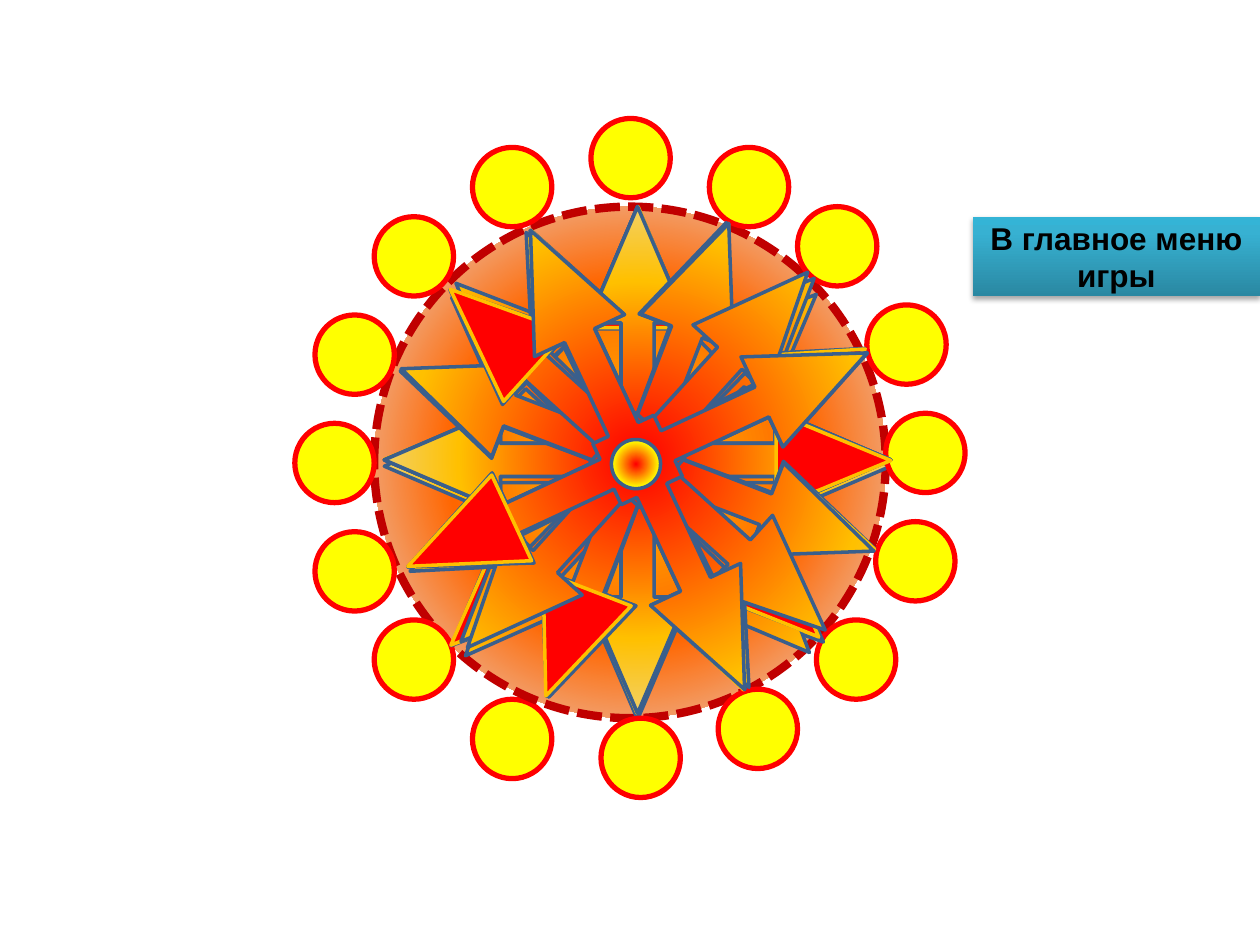
from dataclasses import dataclass

import pptx
import pptx.dml.color
import pptx.enum.dml
import pptx.enum.shapes
import pptx.enum.text
import pptx.oxml
import pptx.oxml.ns
import pptx.util
from pptx.util import Inches

SHAPE = pptx.enum.shapes.MSO_SHAPE
NS = pptx.oxml.ns.nsdecls("a")


@dataclass
class Gradient:
    stops: list[tuple[int, str]]
    angle: int | None = None


@dataclass
class Line:
    color: str
    width: float
    dash: object = None


@dataclass
class Style:
    fill: str | Gradient | None = None
    line: Line | None = None


@dataclass
class Spoke:
    left: float
    top: float
    rotation: float


DISC = Style(Gradient([(0, "FFC000"), (50, "FF6600"), (100, "E1E8F5")]))
RING = Style(line=Line("C00000", 4.75, pptx.enum.dml.MSO_LINE.SQUARE_DOT))
BULB = Style("FFFF00", Line("FF0000", 3))
ARROWS = Style(Gradient([(0, "FF0000"), (50, "FFC000"), (100, "E1E8F5")]), Line("3A5F8C", 2))
POINTER = Style("FF0000", Line("FFC000", 2))
HUB = Style(Gradient([(0, "FF0000"), (50, "FFFF00"), (100, "E1E8F5")]), Line("3A5F8C", 2))
BUTTON = Style(Gradient([(0, "2A88A2"), (80, "37B1D2"), (100, "34B4D6")], 270))

BULB_SIZE = 0.63
DISC_BOX = (2.97, 1.64, 4.06, 4.06)
SPOKE_SIZE = 4.02
FIRST_BULB = (3.75, 5.55)
BULBS = [
    (4.69, 0.94), (4.77, 5.7), (7.03, 3.28), (2.34, 3.36), (6.33, 1.64),
    (2.97, 1.72), (2.97, 4.92), (6.48, 4.92), (5.63, 1.17), (3.75, 1.17),
    (2.5, 2.5), (6.88, 2.42), (6.95, 4.14), (2.5, 4.22), (5.7, 5.47),
]
FIRST_SPOKE = Spoke(3.05, 1.69, 0)
SPOKES = [Spoke(3.05, 1.72, 42.8), Spoke(3.02, 1.72, 226.1)] + [
    Spoke(3.05, 1.64, rotation)
    for rotation in (270, 155.1, 180, 0, 90, 134.2, 334.9, 20.9,
                     63.9, 110.5, 201.1, 312.2, 245)
]


def rgb(color: str) -> pptx.dml.color.RGBColor:
    return pptx.dml.color.RGBColor.from_string(color)


def set_gradient(sp, gradient: Gradient) -> None:
    stops = "".join(
        f'<a:gs pos="{pos * 1000}"><a:srgbClr val="{color}"/></a:gs>'
        for pos, color in gradient.stops
    )
    if gradient.angle is None:
        direction = ('<a:path path="circle"><a:fillToRect l="50000" t="50000" '
                     'r="50000" b="50000"/></a:path>')
    else:
        direction = f'<a:lin ang="{gradient.angle * 60000}" scaled="0"/>'
    xml = (f'<a:gradFill {NS} rotWithShape="1"><a:gsLst>{stops}</a:gsLst>'
           f'{direction}</a:gradFill>')
    sp.fill.background()
    props = sp._element.spPr
    props.replace(props.find(pptx.oxml.ns.qn("a:noFill")), pptx.oxml.parse_xml(xml))


def add_shape(shapes, kind, left: float, top: float, width: float, height: float, style: Style):
    sp = shapes.add_shape(kind, Inches(left), Inches(top), Inches(width), Inches(height))
    sp.shadow.inherit = False
    if isinstance(style.fill, Gradient):
        set_gradient(sp, style.fill)
    elif style.fill:
        sp.fill.solid()
        sp.fill.fore_color.rgb = rgb(style.fill)
    else:
        sp.fill.background()
    if style.line:
        sp.line.color.rgb = rgb(style.line.color)
        sp.line.width = pptx.util.Pt(style.line.width)
        if style.line.dash:
            sp.line.dash_style = style.line.dash
    else:
        sp.line.fill.background()
    return sp


def add_bulb(shapes, left: float, top: float) -> None:
    add_shape(shapes, SHAPE.OVAL, left, top, BULB_SIZE, BULB_SIZE, BULB)


def add_spoke(shapes, spoke: Spoke) -> None:
    group = shapes.add_group_shape()
    left, top = spoke.left, spoke.top
    arrows = add_shape(group.shapes, SHAPE.QUAD_ARROW_CALLOUT, left, top,
                       SPOKE_SIZE, SPOKE_SIZE, ARROWS)
    for i, value in enumerate((0.065, 0.098, 0.229, 0.133)):
        arrows.adjustments[i] = value
    add_shape(group.shapes, SHAPE.ISOSCELES_TRIANGLE, left + 1.64, top, 0.75, 0.91, POINTER)
    add_shape(group.shapes, SHAPE.OVAL, left + 1.79, top + 1.79, 0.39, 0.39, HUB)
    group.rotation = spoke.rotation


def add_button(shapes, text: str) -> None:
    sp = add_shape(shapes, SHAPE.ACTION_BUTTON_CUSTOM, 7.72, 1.72, 2.28, 0.63, BUTTON)
    effects = sp._element.spPr.find(pptx.oxml.ns.qn("a:effectLst"))
    effects.append(pptx.oxml.parse_xml(
        f'<a:outerShdw {NS} blurRad="{pptx.util.Pt(3.1)}" dist="{pptx.util.Pt(1.8)}" '
        'dir="5400000" rotWithShape="0"><a:srgbClr val="000000">'
        '<a:alpha val="35000"/></a:srgbClr></a:outerShdw>'))
    tf = sp.text_frame
    tf.word_wrap = True
    tf.vertical_anchor = pptx.enum.text.MSO_ANCHOR.MIDDLE
    p = tf.paragraphs[0]
    p.text = text
    p.alignment = pptx.enum.text.PP_ALIGN.CENTER
    p.font.name = "Arial"
    p.font.size = pptx.util.Pt(18)
    p.font.bold = True
    p.font.color.rgb = rgb("000000")


def main() -> None:
    prs = pptx.Presentation()
    prs.slide_width = Inches(10)
    prs.slide_height = Inches(7.5)
    shapes = prs.slides.add_slide(prs.slide_layouts[6]).shapes

    add_bulb(shapes, *FIRST_BULB)
    for style in (DISC, RING):
        add_shape(shapes, SHAPE.OVAL, *DISC_BOX, style)
    add_spoke(shapes, FIRST_SPOKE)
    for left, top in BULBS:
        add_bulb(shapes, left, top)
    for spoke in SPOKES:
        add_spoke(shapes, spoke)
    add_button(shapes, "В главное меню игры")
    prs.save("out.pptx")


if __name__ == "__main__":
    main()
